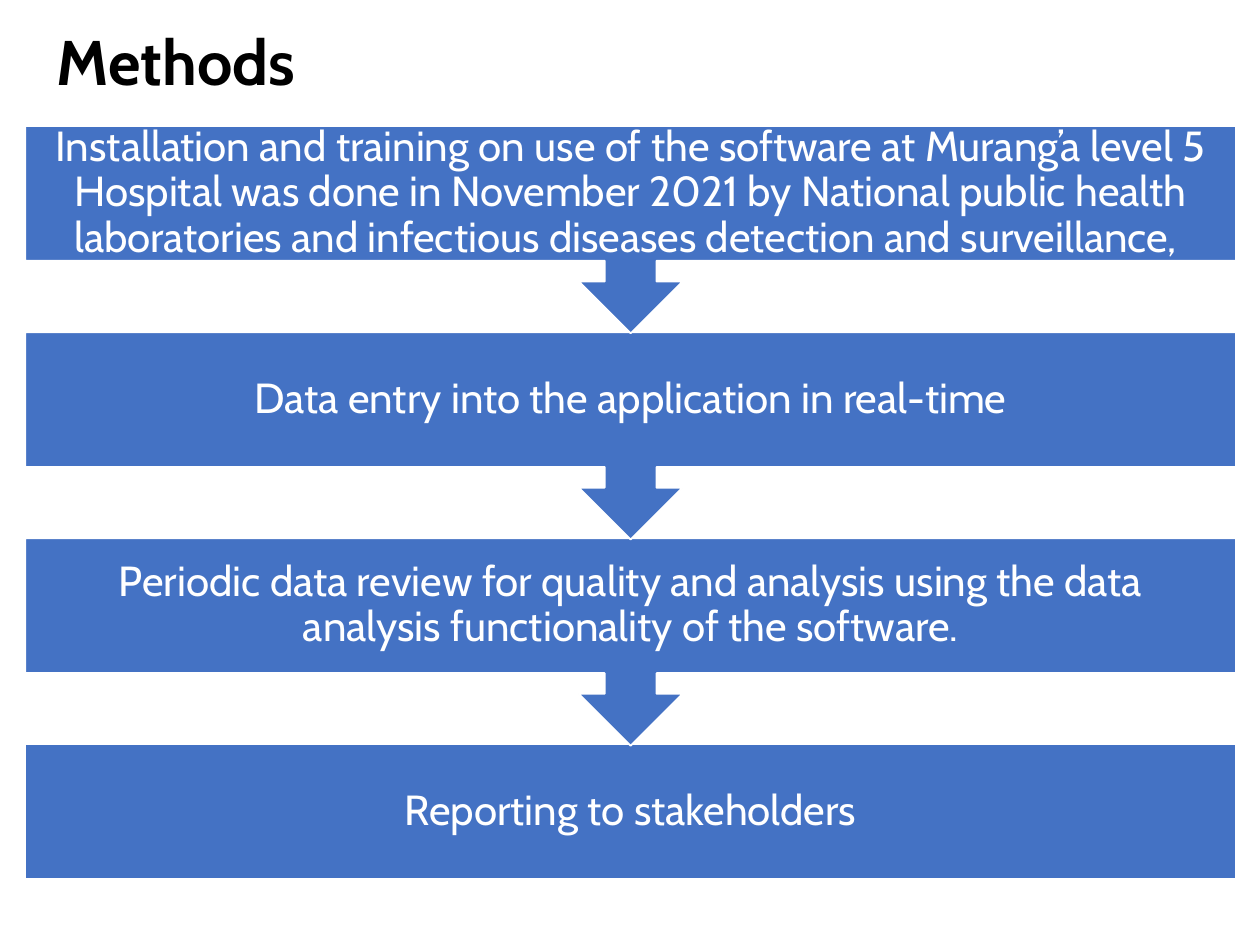
import pptx
import pptx.util
import pptx.dml.color
import pptx.enum.shapes
import pptx.enum.text

Pt = pptx.util.Pt
SHAPE = pptx.enum.shapes.MSO_SHAPE
ALIGN = pptx.enum.text.PP_ALIGN

COLOURS = {"step": "4472C4", "outline": "FFFFFF", "step_text": "FFFFFF", "heading": "000000"}
STEPS = [
    "Installation and training on use of the software at Murang’a level 5 Hospital was done in "
    "November 2021 by National public health laboratories and infectious diseases detection "
    "and surveillance, ",
    "Data entry into the application in real-time",
    "Periodic data review for quality and analysis using the data analysis functionality "
    "of the software.",
    "Reporting to stakeholders",
]
LEFT, TOP, WIDTH = 14.4, 72, 691.9
PITCH, BODY_HEIGHT, CALLOUT_HEIGHT = 117.8, 77, 118.5
INSET = Pt(13.5)
FRAME = {
    "word_wrap": True,
    "auto_size": pptx.enum.text.MSO_AUTO_SIZE.NONE,
    "vertical_anchor": pptx.enum.text.MSO_ANCHOR.MIDDLE,
}
STEP_FRAME = FRAME | {
    "margin_left": INSET, "margin_top": INSET, "margin_right": INSET, "margin_bottom": INSET,
}
STEP_FONT = {"name": "Cabin", "size": Pt(24), "bold": False}
HEADING_FONT = {"name": "Cabin", "size": Pt(36), "bold": True}


def colour(role):
    return pptx.dml.color.RGBColor.from_string(COLOURS[role])


def apply_format(target, values):
    for attribute, value in values.items():
        setattr(target, attribute, value)


def write(frame, wording, frame_format, font_format, role, alignment):
    apply_format(frame, frame_format)
    paragraph = frame.paragraphs[0]
    apply_format(paragraph, {"alignment": alignment, "line_spacing": 0.9})
    run = paragraph.add_run()
    run.text = wording
    apply_format(run.font, font_format)
    run.font.color.rgb = colour(role)


def add_heading(slide, wording):
    heading = slide.shapes.title
    apply_format(heading, {"left": Pt(25.2), "top": Pt(15.8), "width": Pt(620.6), "height": Pt(42.5)})
    write(heading.text_frame, wording, FRAME, HEADING_FONT, "heading", ALIGN.LEFT)


def add_step(flow, wording, top, is_last):
    preset = SHAPE.RECTANGLE if is_last else SHAPE.UP_ARROW_CALLOUT
    height = BODY_HEIGHT if is_last else CALLOUT_HEIGHT
    panel = flow.shapes.add_shape(preset, Pt(LEFT), Pt(top), Pt(WIDTH), Pt(height))
    panel.rotation = 0 if is_last else 180
    panel.shadow.inherit = False
    panel.fill.solid()
    panel.fill.fore_color.rgb = colour("step")
    panel.line.color.rgb = colour("outline")
    panel.line.width = Pt(1)
    label = flow.shapes.add_textbox(Pt(LEFT), Pt(top), Pt(WIDTH), Pt(BODY_HEIGHT))
    write(label.text_frame, wording, STEP_FRAME, STEP_FONT, "step_text", ALIGN.CENTER)


def main():
    presentation = pptx.Presentation()
    apply_format(presentation, {"slide_width": Pt(720), "slide_height": Pt(540)})
    slide = presentation.slides.add_slide(presentation.slide_layouts[5])
    add_heading(slide, "Methods")
    flow = slide.shapes.add_group_shape()
    last = len(STEPS) - 1
    for position, wording in reversed(list(enumerate(STEPS))):
        add_step(flow, wording, TOP + position * PITCH, position == last)
    presentation.save("out.pptx")


if __name__ == "__main__":
    main()
